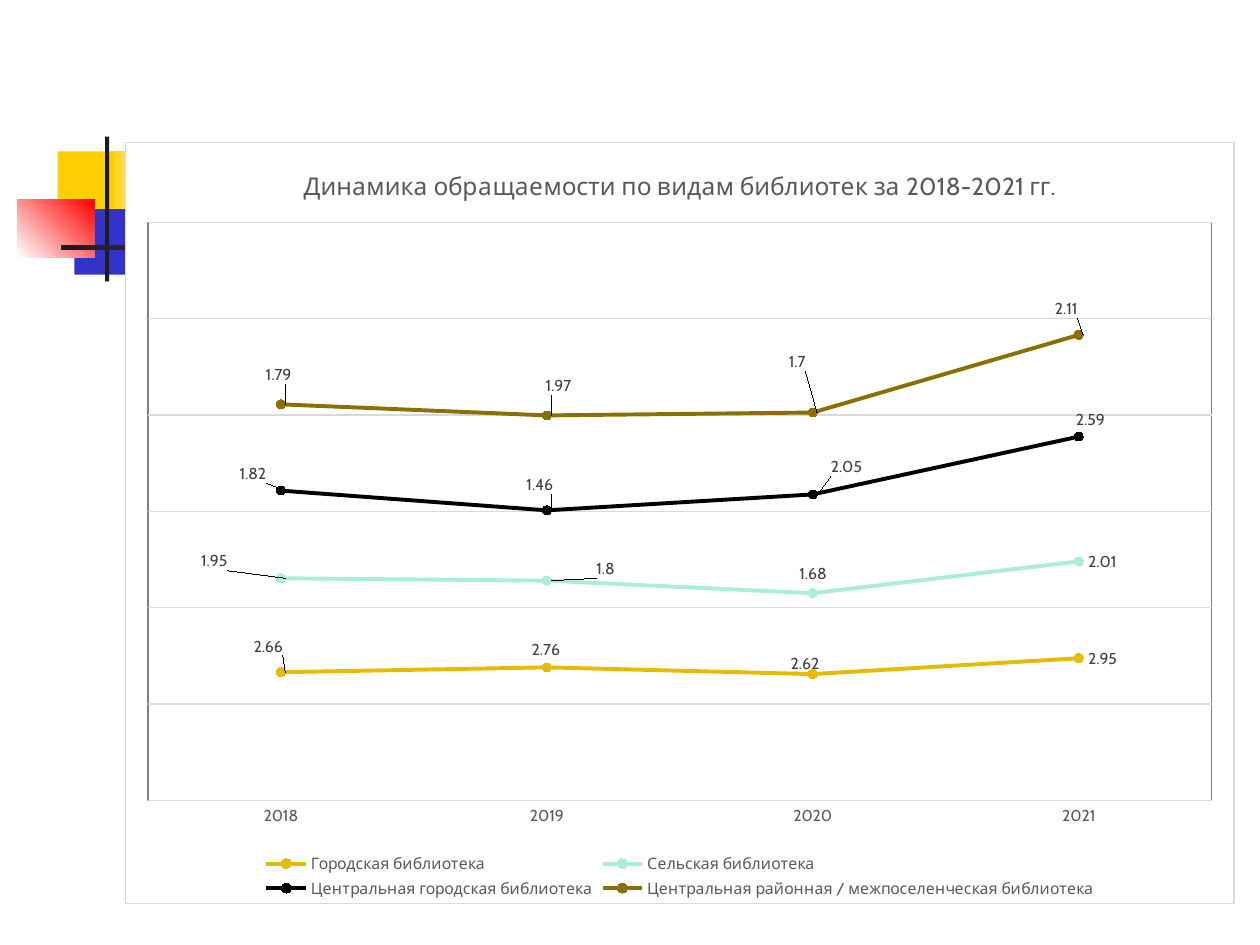
"""Build a slide with a stacked line chart of library turnover by type, 2018-2021."""
from lxml import etree
from pptx import Presentation
from pptx import util as u
from pptx.chart.data import CategoryChartData
from pptx.dml.color import RGBColor
from pptx.enum import chart as c, shapes
from pptx.oxml import ns

Pt = u.Pt
COLORS = {
    "yellow": "FFCF01", "blue": "3333CC", "red": "FF0000", "ink": "1C1C1C", "white": "FFFFFF",
    "grid": "D9D9D9", "frame": "808080", "text": "595959", "label": "404040",
    "gold": "E7BB01", "mint": "AAEFD1", "black": "000000", "olive": "8B7001",
}
FONT = "Cabin"


def rgb(name):
    return RGBColor.from_string(COLORS[name])


def format_text(target, text=None, size=9, color="text"):
    if text is not None:
        target.text = text
        target = target.paragraphs[0].runs[0]
    font = target.font
    font.name, font.size, font.bold = FONT, Pt(size), False
    font.color.rgb = rgb(color)


presentation = Presentation()
presentation.slide_width, presentation.slide_height = Pt(720), Pt(540)
slide = presentation.slides.add_slide(presentation.slide_layouts[6])

decorations = [
    (33, 86.5, 35, 37.5, ["yellow"], 0),
    (63.5, 86.5, 26, 37.5, ["yellow", "white"], 0),
    (42.5, 119.5, 33, 37.5, ["blue"], 0),
    (72, 119.5, 29, 37.5, ["blue", "white"], 0),
    (10, 114, 44, 33, ["white", "red"], 45),
    (60, 78, 2.4, 82.8, ["ink"], 0),
    (34.6, 140.2, 648, 2.4, ["ink", "white"], 0),
]
for left, top, width, height, fills, angle in decorations:
    shape = slide.shapes.add_shape(
        shapes.MSO_SHAPE.RECTANGLE, Pt(left), Pt(top), Pt(width), Pt(height))
    shape.shadow.inherit = False
    shape.line.fill.background()
    if len(fills) == 1:
        shape.fill.solid()
        shape.fill.fore_color.rgb = rgb(fills[0])
    else:
        shape.fill.gradient()
        shape.fill.gradient_angle = angle
        for stop, position, name in zip(shape.fill.gradient_stops, (0, 1), fills):
            stop.position = position
            stop.color.rgb = rgb(name)

CHART_WIDTH, CHART_HEIGHT = 634, 435.5
series_rows = [
    ("Городская библиотека", "gold", (2.66, 2.76, 2.62, 2.95),
     [(-21, -15), (-14, -10), (-18, -6)]),
    ("Сельская библиотека", "mint", (1.95, 1.8, 1.68, 2.01),
     [(-51, -10), (23, -7), (-13, -11)]),
    ("Центральная городская библиотека", "black", (1.82, 1.46, 2.05, 2.59),
     [(-29, -10), (-17, -15), (5, -16), (-7, -10)]),
    ("Центральная районная / межпоселенческая библиотека", "olive", (1.79, 1.97, 1.7, 2.11),
     [(-14, -17), (-6, -17), (-19, -29), (-19, -15)]),
]
chart_data = CategoryChartData()
chart_data.categories = ["2018", "2019", "2020", "2021"]
for name, color, values, offsets in series_rows:
    chart_data.add_series(name, values)
chart = slide.shapes.add_chart(
    c.XL_CHART_TYPE.LINE_MARKERS_STACKED, Pt(71.5), Pt(81),
    Pt(CHART_WIDTH), Pt(CHART_HEIGHT), chart_data).chart
format_text(chart, size=10, color="black")
chart.has_title = True
format_text(chart.chart_title.text_frame,
            "Динамика обращаемости по видам библиотек за 2018-2021 гг.", size=14)
chart.chart_title.include_in_layout = False
chart.has_legend = True
chart.legend.position = c.XL_LEGEND_POSITION.BOTTOM
chart.legend.include_in_layout = False
format_text(chart.legend)

category_axis, value_axis = chart.category_axis, chart.value_axis
category_axis.major_tick_mark = c.XL_TICK_MARK.NONE
format_text(category_axis.tick_labels)
value_axis.visible = False
value_axis.minimum_scale, value_axis.maximum_scale, value_axis.major_unit = 0, 12, 2
value_axis.tick_labels.number_format = "0.00"
value_axis.tick_labels.number_format_is_linked = False
value_axis.has_major_gridlines = True
for line in (category_axis.format.line, value_axis.major_gridlines.format.line):
    line.color.rgb = rgb("grid")
    line.width = Pt(0.75)

LAYOUT = ('<c:layout %s><c:manualLayout>{}</c:manualLayout></c:layout>'
          % ns.nsdecls("c"))
for series, (name, color, values, offsets) in zip(chart.series, series_rows):
    series.smooth = False
    series.format.line.color.rgb = rgb(color)
    series.format.line.width = Pt(2.25)
    series.marker.style = c.XL_MARKER_STYLE.CIRCLE
    series.marker.size = 5
    series.marker.format.fill.solid()
    series.marker.format.fill.fore_color.rgb = rgb(color)
    series.marker.format.line.color.rgb = rgb(color)
    labels = series.data_labels
    labels.show_value = True
    labels.position = c.XL_LABEL_POSITION.RIGHT
    format_text(labels, color="label")
    for index in range(len(offsets)):
        label = series.points[index].data_label
        format_text(label, color="label")
        label.position = c.XL_LABEL_POSITION.RIGHT
    for element, (dx, dy) in zip(labels._element.findall(ns.qn("c:dLbl")), offsets):
        element.insert(1, etree.fromstring(LAYOUT.format(
            f'<c:x val="{dx / CHART_WIDTH:.4f}"/><c:y val="{dy / CHART_HEIGHT:.4f}"/>')))

AREA = ('<c:spPr %s><a:solidFill><a:srgbClr val="{}"/></a:solidFill><a:ln w="9525">'
        '<a:solidFill><a:srgbClr val="{}"/></a:solidFill></a:ln></c:spPr>'
        % ns.nsdecls("c", "a"))
chart_space = chart._chartSpace
chart_space.insert(1, etree.fromstring(
    '<c:roundedCorners %s val="0"/>' % ns.nsdecls("c")))
chart_space.find(ns.qn("c:txPr")).addprevious(
    etree.fromstring(AREA.format(COLORS["white"], COLORS["grid"])))
plot_area = chart_space.find(".//" + ns.qn("c:plotArea"))
plot_area.append(etree.fromstring(AREA.format(COLORS["white"], COLORS["frame"])))
for layout in plot_area.findall(ns.qn("c:layout")):
    plot_area.remove(layout)
plot_area.insert(0, etree.fromstring(LAYOUT.format(
    '<c:layoutTarget val="inner"/><c:xMode val="edge"/><c:yMode val="edge"/>'
    '<c:x val="0.02"/><c:y val="0.105"/><c:w val="0.96"/><c:h val="0.76"/>')))

presentation.save("out.pptx")
